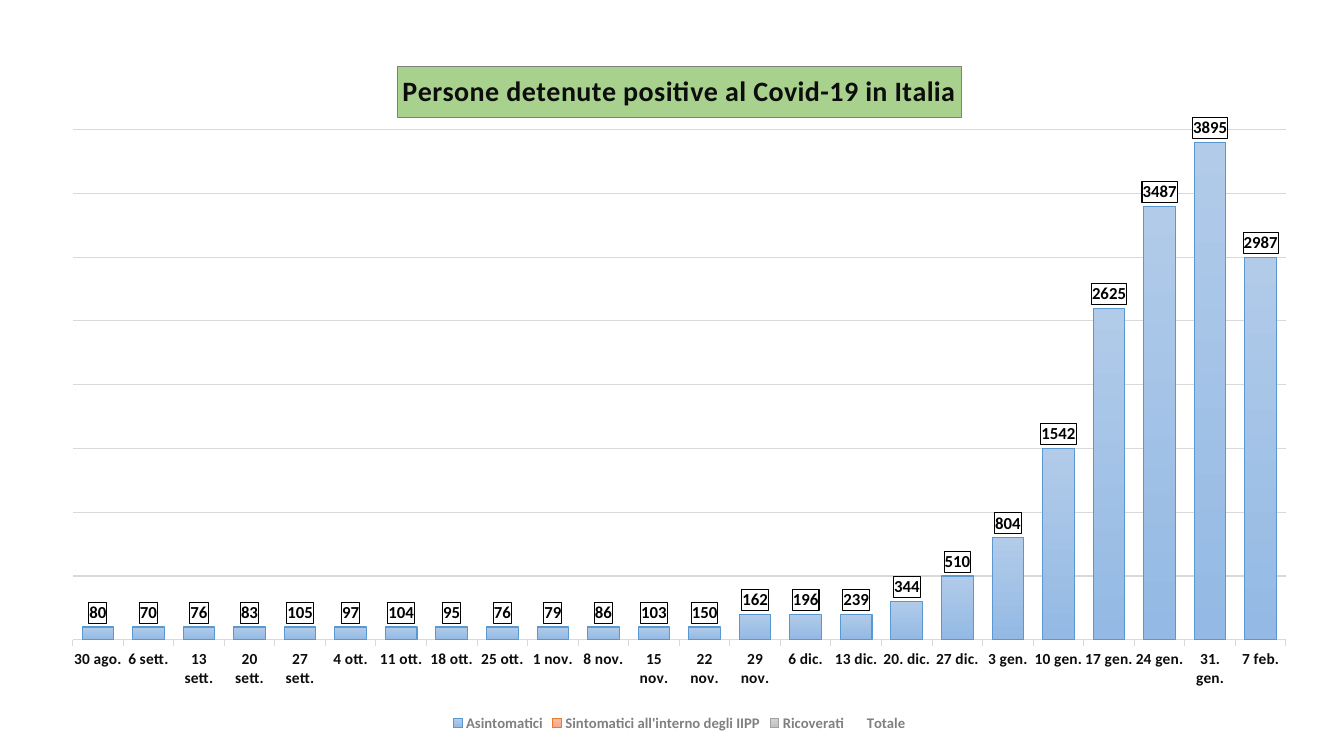
from lxml import etree
from pptx import Presentation
from pptx.chart.data import CategoryChartData
from pptx.dml.color import RGBColor
from pptx.enum.chart import XL_CHART_TYPE, XL_LABEL_POSITION, XL_LEGEND_POSITION, XL_TICK_MARK
from pptx.oxml import parse_xml
from pptx.oxml.ns import nsdecls, qn
from pptx.util import Pt

STACKED = XL_CHART_TYPE.COLUMN_STACKED
INSIDE_BASE = XL_LABEL_POSITION.INSIDE_BASE
BOTTOM = XL_LEGEND_POSITION.BOTTOM
TICK_OUT, TICK_NONE = XL_TICK_MARK.OUTSIDE, XL_TICK_MARK.NONE


def color(hex_code):
    return RGBColor.from_string(hex_code)


def style_font(font, size, hex_code):
    font.name = "Calibri"
    font.size = Pt(size)
    font.bold = True
    font.color.rgb = color(hex_code)


# Weekly counts; only the totals are labelled, so the parts are in hundreds
weeks = ["30 ago.", "6 sett.", "13 sett.", "20 sett.", "27 sett.", "4 ott.",
         "11 ott.", "18 ott.", "25 ott.", "1 nov.", "8 nov.", "15 nov.",
         "22 nov.", "29 nov.", "6 dic.", "13 dic.", "20. dic.", "27 dic.",
         "3 gen.", "10 gen.", "17 gen.", "24 gen.", "31. gen.", "7 feb."]
totals = [80, 70, 76, 83, 105, 97, 104, 95, 76, 79, 86, 103, 150, 162, 196, 239,
          344, 510, 804, 1542, 2625, 3487, 3895, 2987]
asymptomatic = [100] * 13 + [200, 200, 200, 300, 500, 800, 1500, 2600, 3400, 3900, 3000]
below_fifty = [0] * len(weeks)

counts = CategoryChartData(number_format="General")
counts.categories = weeks
counts.add_series("Asintomatici", asymptomatic)
counts.add_series("Sintomatici all'interno degli IIPP", below_fifty)
counts.add_series("Ricoverati", below_fifty)
counts.add_series("Totale", totals)

# Slide and chart
deck = Presentation()
deck.slide_width, deck.slide_height = Pt(960), Pt(540)
slide = deck.slides.add_slide(deck.slide_layouts[6])
chart = slide.shapes.add_chart(STACKED, Pt(33.8), Pt(33.5), Pt(902.9), Pt(492.5), counts).chart
chart.font.name = "Calibri"
chart.font.size = Pt(10)

# Title in a green box, slightly letter-spaced
chart.has_title = True
title = chart.chart_title
title.include_in_layout = False
title_run = title.text_frame.paragraphs[0].add_run()
title_run.text = "Persone detenute positive al Covid-19 in Italia"
style_font(title_run.font, 20, "0D0D0D")
title_run.font._element.set("spc", "20")
title.format.fill.solid()
title.format.fill.fore_color.rgb = color("A9D18E")
title.format.line.color.rgb = color("7F7F7F")
title.format.line.width = Pt(0.75)

# Fixed place of the plot area, as shares of the chart
plot_area = chart.plots[0]._element.getparent()
for old_layout in plot_area.findall(qn("c:layout")):
    plot_area.remove(old_layout)
layout = parse_xml(f"<c:layout {nsdecls('c')}><c:manualLayout/></c:layout>")
settings = {"layoutTarget": "inner", "xMode": "edge", "yMode": "edge",
            "x": 0.02, "y": 0.12, "w": 0.96, "h": 0.74}
for tag, value in settings.items():
    etree.SubElement(layout[0], qn(f"c:{tag}")).set("val", str(value))
plot_area.insert(0, layout)

# Axes
week_axis = chart.category_axis
week_axis.major_tick_mark = TICK_OUT
week_axis.format.line.color.rgb = color("D9D9D9")
week_axis.format.line.width = Pt(0.75)
style_font(week_axis.tick_labels.font, 11, "0D0D0D")

count_axis = chart.value_axis
count_axis.minimum_scale, count_axis.maximum_scale = 0, 4000
count_axis.major_unit = 500
count_axis.major_tick_mark = TICK_NONE
count_axis.visible = False
count_axis.major_gridlines.format.line.color.rgb = color("D9D9D9")
count_axis.major_gridlines.format.line.width = Pt(0.75)

# Legend
chart.has_legend = True
chart.legend.position = BOTTOM
chart.legend.include_in_layout = False
style_font(chart.legend.font, 10.5, "808080")

# Columns with a gradient from top to bottom
bars = chart.plots[0]
bars.gap_width = 60
bars.overlap = 100
bars.vary_by_categories = False
*case_series, total_series = bars.series
bar_colors = [("B1CBE9", "93B9E4", "5998D0"),
              ("F7BDA5", "F8A582", "E87A30"),
              ("D2D2D2", "C0C0C0", "A1A1A1")]
for cases, (top, base, outline) in zip(case_series, bar_colors):
    fill = cases.format.fill
    fill.gradient()
    fill.gradient_angle = 270
    for stop, position, shade in zip(fill.gradient_stops, (0, 1), (top, base)):
        stop.position = position
        stop.color.rgb = color(shade)
    cases.format.line.color.rgb = color(outline)
    cases.format.line.width = Pt(0.75)

# Unfilled totals carry the boxed labels
total_series.format.fill.background()
total_series.format.line.fill.background()
labels = total_series.data_labels
labels.show_value = True
labels.position = INSIDE_BASE
style_font(labels.font, 12, "000000")
label_box = parse_xml(
    f"<c:spPr {nsdecls('c', 'a')}>"
    '<a:solidFill><a:srgbClr val="FFFFFF"/></a:solidFill>'
    '<a:ln w="9525"><a:solidFill><a:srgbClr val="000000"/></a:solidFill></a:ln>'
    "</c:spPr>")
labels._element.find(qn("c:txPr")).addprevious(label_box)

deck.save("out.pptx")
